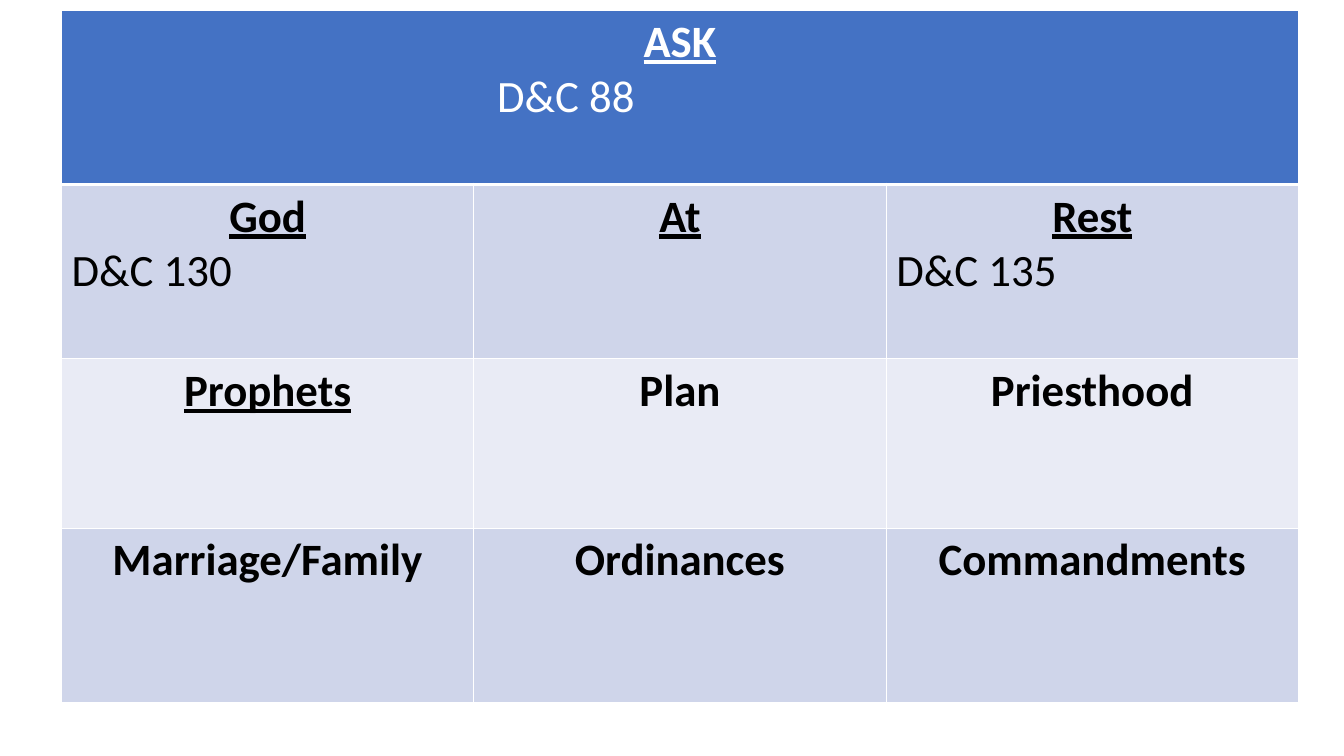
from lxml.etree import SubElement
from pptx import Presentation
from pptx.dml.color import RGBColor
from pptx.enum.text import PP_ALIGN
from pptx.oxml.ns import qn
from pptx.util import Inches, Pt

COLORS = {
    "header": "4472C4",
    "dark_band": "CFD5EA",
    "light_band": "E9EBF5",
    "white": "FFFFFF",
    "black": "000000",
}
TOPICS = [
    [("ASK", True, "D&C 88")],
    [("God", True, "D&C 130"), ("At", True, ""), ("Rest", True, "D&C 135")],
    [("Prophets", True, ""), ("Plan", False, ""), ("Priesthood", False, "")],
    [("Marriage/Family", False, ""), ("Ordinances", False, ""), ("Commandments", False, "")],
]
BANDS = ["header", "dark_band", "light_band", "dark_band"]
ROW_HEIGHTS = [1.73, 1.73, 1.68, 1.73]
COLUMN_WIDTH = 4.09
HEADER_INDENT = 4.22


class TopicSlide:
    """Holds the style and the current slide."""

    def __init__(self, presentation):
        self.slide = presentation.slides.add_slide(presentation.slide_layouts[6])
        self.font = "Calibri"
        self.size = Pt(32)

    def borders(self, cell, row):
        properties = cell._tc.get_or_add_tcPr()
        widths = {"lnL": 1, "lnR": 1, "lnT": 3 if row == 1 else 1, "lnB": 3 if row == 0 else 1}
        for side, width in widths.items():
            line = SubElement(properties, qn(f"a:{side}"), w=str(Pt(width)))
            fill = SubElement(line, qn("a:solidFill"))
            SubElement(fill, qn("a:srgbClr"), val=COLORS["white"])

    def paragraph(self, paragraph, text, color, bold, underline):
        paragraph.text = text
        font = paragraph.runs[0].font
        font.name, font.size = self.font, self.size
        font.bold, font.underline = bold, underline
        font.color.rgb = RGBColor.from_string(COLORS[color])

    def topic(self, cell, heading, underline, reference, color, indent):
        title = cell.text_frame.paragraphs[0]
        self.paragraph(title, heading, color, True, underline)
        title.alignment = PP_ALIGN.CENTER
        if reference:
            verse = cell.text_frame.add_paragraph()
            self.paragraph(verse, reference, color, False, False)
            verse.alignment = PP_ALIGN.LEFT
            verse._p.get_or_add_pPr().set("marL", str(Inches(indent)))

    def table(self, left, top):
        grid = self.slide.shapes.add_table(
            len(TOPICS), 3, Inches(left), Inches(top),
            Inches(3 * COLUMN_WIDTH), Inches(sum(ROW_HEIGHTS))).table
        for column in grid.columns:
            column.width = Inches(COLUMN_WIDTH)
        grid.cell(0, 0).merge(grid.cell(0, 2))
        for row, (topics, band, height) in enumerate(zip(TOPICS, BANDS, ROW_HEIGHTS)):
            grid.rows[row].height = Inches(height)
            for cell in grid.rows[row].cells:
                self.borders(cell, row)
                cell.fill.solid()
                cell.fill.fore_color.rgb = RGBColor.from_string(COLORS[band])
            color, indent = ("white", HEADER_INDENT) if row == 0 else ("black", 0)
            for column, (heading, underline, reference) in enumerate(topics):
                self.topic(grid.cell(row, column), heading, underline, reference, color, indent)


def main():
    presentation = Presentation()
    presentation.slide_width = Inches(13.33)
    presentation.slide_height = Inches(7.5)
    TopicSlide(presentation).table(0.61, 0.1)
    presentation.save("out.pptx")


if __name__ == "__main__":
    main()
